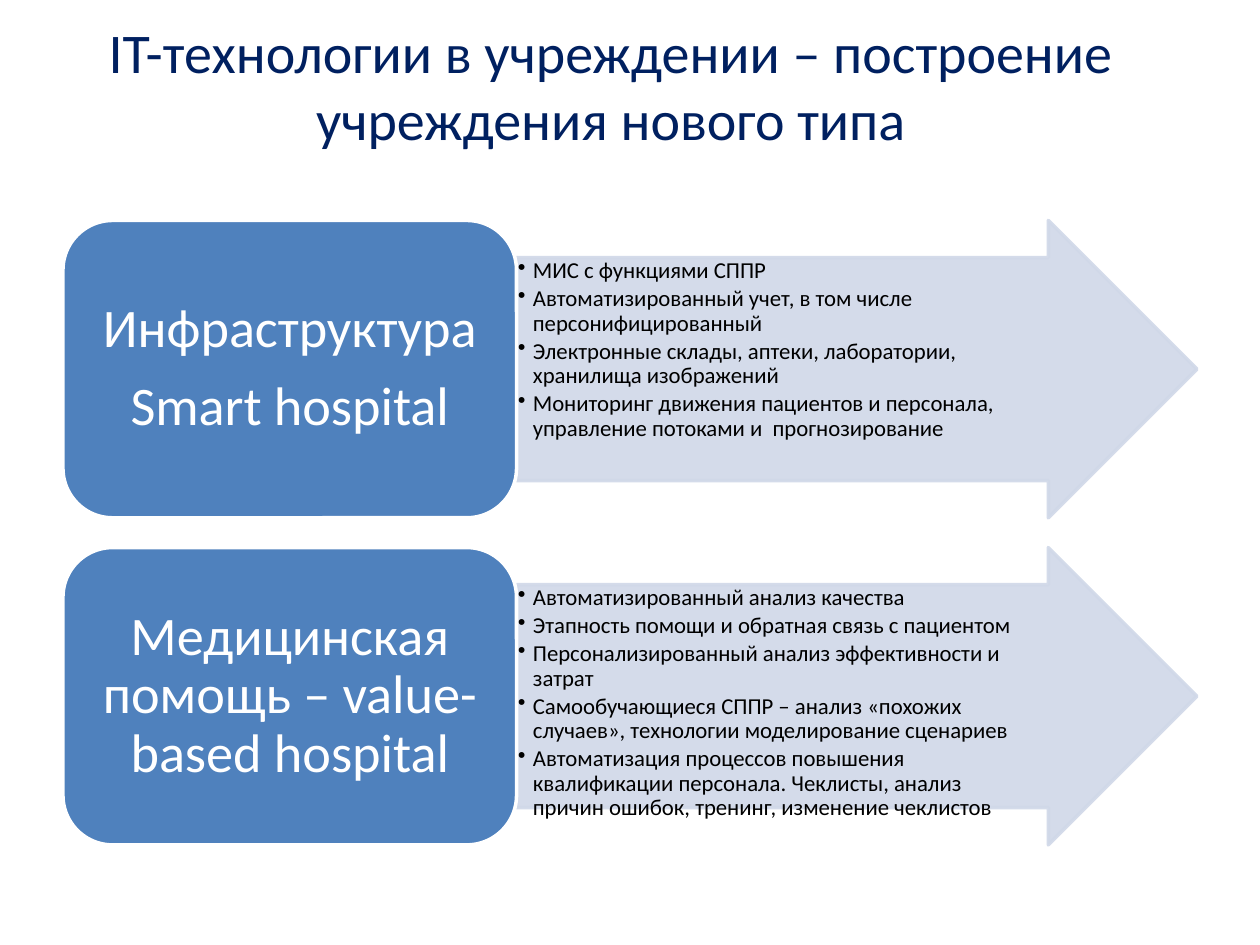
import pptx
import pptx.util
import pptx.dml.color
import pptx.enum.shapes
import pptx.enum.text
import pptx.oxml.ns
import lxml.etree

TITLE = "IT-технологии в учреждении – построение учреждения нового типа"
DIRECTIONS = [
    (
        ["Инфраструктура", "Smart hospital"],
        [
            "МИС с функциями СППР",
            "Автоматизированный учет, в том числе персонифицированный",
            "Электронные склады, аптеки, лаборатории, хранилища изображений",
            "Мониторинг движения пациентов и персонала, управление потоками и  прогнозирование",
        ],
    ),
    (
        ["Медицинская помощь – value-based hospital"],
        [
            "Автоматизированный анализ качества",
            "Этапность помощи и обратная связь с пациентом",
            "Персонализированный анализ эффективности и затрат",
            "Самообучающиеся СППР – анализ «похожих случаев», технологии моделирование сценариев",
            "Автоматизация процессов повышения квалификации персонала. Чеклисты, анализ причин ошибок, тренинг, изменение чеклистов",
        ],
    ),
]
FONT = "Calibri"
NAVY, BLUE, PALE, WHITE, BLACK = "002060", "4F81BD", "D0D8E8", "FFFFFF", "000000"

SLIDE_WIDTH, SLIDE_HEIGHT = 10, 7.5
LEFT, TOP, WIDTH = 0.5, 1.75, 9
BLOCK_WIDTH = 0.4 * WIDTH
ROW_HEIGHT = 2.36
ROW_STEP = 1.1 * ROW_HEIGHT
BULLET_INDENT = 0.12

Inches, Pt = pptx.util.Inches, pptx.util.Pt
Align, Anchor = pptx.enum.text.PP_ALIGN, pptx.enum.text.MSO_ANCHOR
Shape = pptx.enum.shapes.MSO_SHAPE
qn = pptx.oxml.ns.qn


def color(value):
    return pptx.dml.color.RGBColor.from_string(value)


def set_alpha(color_format_fill, percent):
    for element in color_format_fill.iter(qn("a:srgbClr")):
        lxml.etree.SubElement(element, qn("a:alpha")).set("val", str(percent * 1000))


def add_bullet(paragraph):
    properties = paragraph._p.get_or_add_pPr()
    indent = Inches(BULLET_INDENT)
    properties.set("marL", str(indent))
    properties.set("indent", str(-indent))
    lxml.etree.SubElement(properties, qn("a:buChar")).set("char", "•")


def write(shape, lines, size, text_color, anchor, insets, align=Align.CENTER,
          line_spacing=None, after_share=0, bullets=False):
    frame = shape.text_frame
    frame.word_wrap = True
    frame.vertical_anchor = anchor
    frame.margin_left, frame.margin_top, frame.margin_right, frame.margin_bottom = map(Inches, insets)
    for index, line in enumerate(lines):
        paragraph = frame.paragraphs[0] if index == 0 else frame.add_paragraph()
        if bullets:
            add_bullet(paragraph)
        paragraph.alignment = align
        paragraph.line_spacing = line_spacing
        paragraph.space_after = Pt(round(size * after_share, 1))
        run = paragraph.add_run()
        run.text = line
        run.font.name = FONT
        run.font.size = Pt(size)
        run.font.color.rgb = color(text_color)


def add_shape(slide, kind, left, top, width, fill, line):
    shape = slide.shapes.add_shape(kind, Inches(left), Inches(top), Inches(width), Inches(ROW_HEIGHT))
    shape.shadow.inherit = False
    shape.fill.solid()
    shape.fill.fore_color.rgb = color(fill)
    shape.line.color.rgb = color(line)
    shape.line.width = Pt(2)
    return shape


def add_direction(slide, top, heading, points):
    arrow = add_shape(slide, Shape.RIGHT_ARROW, LEFT + BLOCK_WIDTH, top, WIDTH - BLOCK_WIDTH, PALE, PALE)
    arrow.adjustments[0], arrow.adjustments[1] = 0.75, 0.5
    set_alpha(arrow._element.spPr, 90)
    write(arrow, points, 13, BLACK, Anchor.TOP, (0.01, 0.01, 0.6, 0.01), Align.LEFT, 0.9, 0.15, True)

    block = add_shape(slide, Shape.ROUNDED_RECTANGLE, LEFT, top, BLOCK_WIDTH, BLUE, WHITE)
    write(block, heading, 31, WHITE, Anchor.MIDDLE, (0.13, 0.06, 0.13, 0.06),
          line_spacing=0.9, after_share=0.35)


def main():
    presentation = pptx.Presentation()
    presentation.slide_width = Inches(SLIDE_WIDTH)
    presentation.slide_height = Inches(SLIDE_HEIGHT)
    slide = presentation.slides.add_slide(presentation.slide_layouts[6])
    title = slide.shapes.add_textbox(Inches(0.2), 0, Inches(9.3), Inches(1.34))
    write(title, [TITLE], 32, NAVY, Anchor.MIDDLE, (0.1, 0.05, 0.1, 0.05))
    for row, (heading, points) in enumerate(DIRECTIONS):
        add_direction(slide, TOP + row * ROW_STEP, heading, points)
    presentation.save("out.pptx")


if __name__ == "__main__":
    main()
